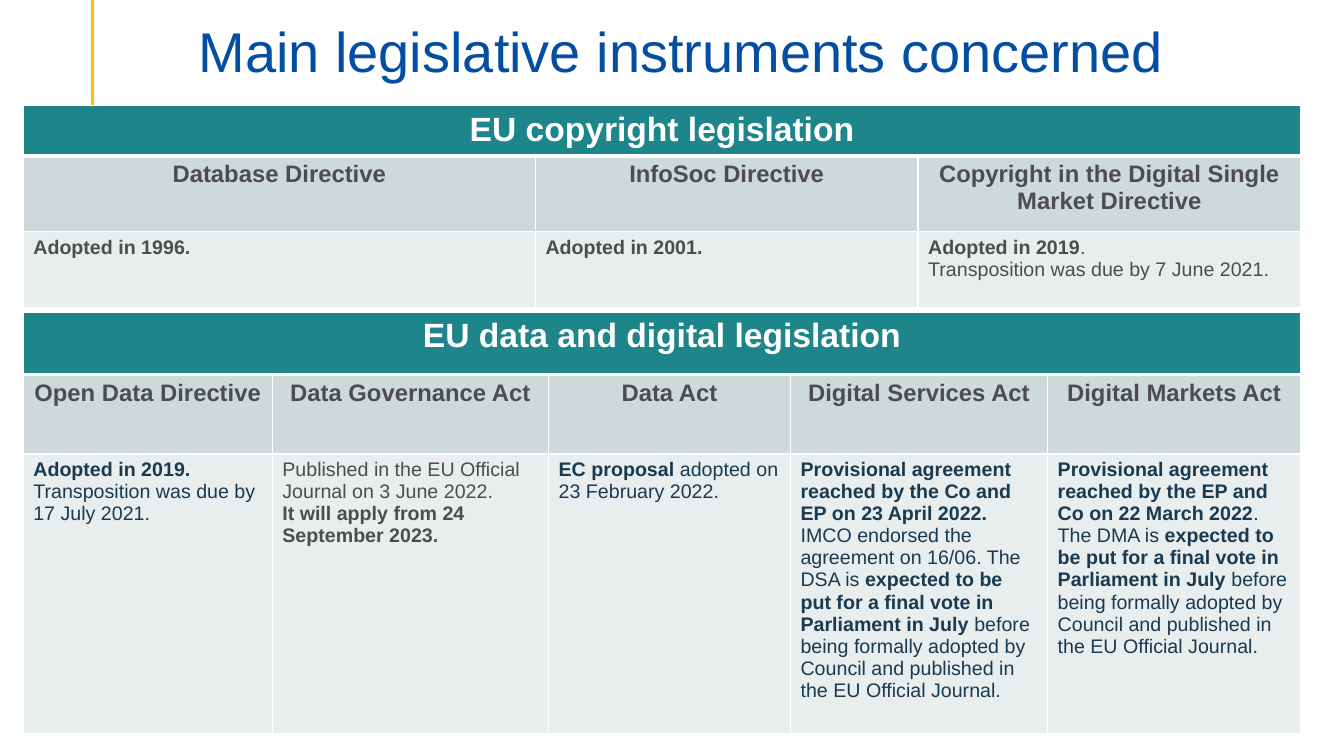
from pptx import Presentation
from pptx.dml.color import RGBColor
from pptx.enum.shapes import MSO_CONNECTOR
from pptx.enum.text import MSO_ANCHOR, PP_ALIGN
from pptx.oxml import parse_xml
from pptx.oxml.ns import nsdecls
from pptx.util import Inches, Pt

WHITE = RGBColor(0xFF, 0xFF, 0xFF)
GOLD = RGBColor(0xFF, 0xC0, 0x00)
BLUE = RGBColor(0x03, 0x4E, 0xA2)
TEAL = RGBColor(0x1E, 0x85, 0x8B)
MIST = RGBColor(0xCD, 0xD9, 0xDA)
PALE = RGBColor(0xE8, 0xED, 0xEE)
GREY = RGBColor(0x4D, 0x4D, 0x4D)
NAVY = RGBColor(0x1A, 0x3A, 0x50)

BOLD, PLAIN = True, False
TABLE_LEFT = 1.73

FINAL_VOTE = [
    ("expected to be put for a final vote in Parliament in July ", BOLD),
    ("before being formally adopted by Council and published in the EU Official Journal.", PLAIN),
]

# Each act: name, text colour, paragraphs of (text, weight) runs
COPYRIGHT_ACTS = [
    ("Database Directive", GREY, [[("Adopted in 1996.", BOLD)]]),
    ("InfoSoc Directive", GREY, [[("Adopted in 2001.", BOLD)]]),
    ("Copyright in the Digital Single Market Directive", GREY, [
        [("Adopted in 2019", BOLD), (".", PLAIN)],
        [("Transposition was due by 7 June 2021.", PLAIN)],
    ]),
]
DIGITAL_ACTS = [
    ("Open Data Directive", NAVY, [
        [("Adopted in 2019. ", BOLD), ("Transposition was due by 17 July 2021.", PLAIN)],
    ]),
    ("Data Governance Act", GREY, [
        [("Published in the EU Official Journal on 3 June 2022.", PLAIN)],
        [("It will apply from 24 September 2023.", BOLD)],
    ]),
    ("Data Act", NAVY, [
        [("EC proposal ", BOLD), ("adopted on 23 February 2022.", PLAIN)],
    ]),
    ("Digital Services Act", NAVY, [
        [("Provisional agreement reached by the Co and EP on 23 April 2022.", BOLD)],
        [("IMCO endorsed the agreement on 16/06. The DSA is ", PLAIN), *FINAL_VOTE],
    ]),
    ("Digital Markets Act", NAVY, [
        [("Provisional agreement reached by the EP and Co on 22 March 2022", BOLD), (".", PLAIN)],
        [("The DMA is ", PLAIN), *FINAL_VOTE],
    ]),
]


class LegislationSlide:
    """Positions and sizes are percentages of the slide's width and height."""

    font = "Arial"

    def __init__(self, deck):
        self.width, self.height = deck.slide_width, deck.slide_height
        self.slide = deck.slides.add_slide(deck.slide_layouts[6])

    def across(self, share):
        return round(self.width * share / 100)

    def down(self, share):
        return round(self.height * share / 100)

    def add_text(self, frame, paragraphs, size, color, align=PP_ALIGN.LEFT):
        frame.word_wrap = True
        for index, runs in enumerate(paragraphs):
            paragraph = frame.paragraphs[0] if index == 0 else frame.add_paragraph()
            paragraph.alignment = align
            for text, bold in runs:
                run = paragraph.add_run()
                run.text = text
                run.font.name = self.font
                run.font.size = Pt(size)
                run.font.bold = bold
                run.font.color.rgb = color

    def accent_line(self, x, bottom):
        line = self.slide.shapes.add_connector(
            MSO_CONNECTOR.STRAIGHT, self.across(x), 0, self.across(x), self.down(bottom))
        line.line.color.rgb = GOLD
        line.line.width = Pt(2.25)
        line._element.spPr.append(parse_xml(f"<a:effectLst {nsdecls('a')}/>"))

    def title(self, text, left, top, width, height):
        box = self.slide.shapes.add_textbox(
            self.across(left), self.down(top), self.across(width), self.down(height))
        frame = box.text_frame
        frame.vertical_anchor = MSO_ANCHOR.BOTTOM
        frame.margin_bottom = 0
        self.add_text(frame, [[(text, PLAIN)]], 40, BLUE, PP_ALIGN.CENTER)
        frame.paragraphs[0].line_spacing = 0.9

    def style_cell(self, cell, fill, bottom_width=1):
        properties = cell._tc.get_or_add_tcPr()
        for side, points in (("L", 1), ("R", 1), ("T", 1), ("B", bottom_width)):
            properties.append(parse_xml(
                f'<a:ln{side} {nsdecls("a")} w="{Pt(points)}"><a:solidFill>'
                f'<a:srgbClr val="{WHITE}"/></a:solidFill></a:ln{side}>'))
        cell.fill.solid()
        cell.fill.fore_color.rgb = fill

    def act_table(self, heading, acts, top, column_widths, row_heights):
        table = self.slide.shapes.add_table(
            len(row_heights), len(acts), self.across(TABLE_LEFT), self.down(top),
            self.across(sum(column_widths)), self.down(sum(row_heights))).table
        table.first_row = table.horz_banding = False
        for row, height in zip(table.rows, row_heights):
            row.height = self.down(height)
        for index, (name, color, status) in enumerate(acts):
            table.columns[index].width = self.across(column_widths[index])
            heading_cell, name_cell, status_cell = (table.cell(row, index) for row in range(3))
            self.style_cell(heading_cell, TEAL, bottom_width=3)
            self.style_cell(name_cell, MIST)
            self.style_cell(status_cell, PALE)
            self.add_text(name_cell.text_frame, [[(name, BOLD)]], 17, GREY, PP_ALIGN.CENTER)
            self.add_text(status_cell.text_frame, status, 14, color)
        table.cell(0, 0).merge(table.cell(0, len(acts) - 1))
        self.add_text(table.cell(0, 0).text_frame, [[(heading, BOLD)]], 24, WHITE, PP_ALIGN.CENTER)


def main():
    deck = Presentation()
    deck.slide_width, deck.slide_height = Inches(13.33), Inches(7.5)
    page = LegislationSlide(deck)
    page.accent_line(6.9, 18.67)
    page.title("Main legislative instruments concerned", 7.5, 3.87, 86.27, 7.33)
    page.act_table("EU data and digital legislation", DIGITAL_ACTS, 41.33,
                   [18.53, 20.56, 18, 19.13, 18.83], [8.2, 10.53, 37])
    page.act_table("EU copyright legislation", COPYRIGHT_ACTS, 14,
                   [38.11, 28.47, 28.47], [6.53, 10, 10])
    deck.save("out.pptx")


if __name__ == "__main__":
    main()
